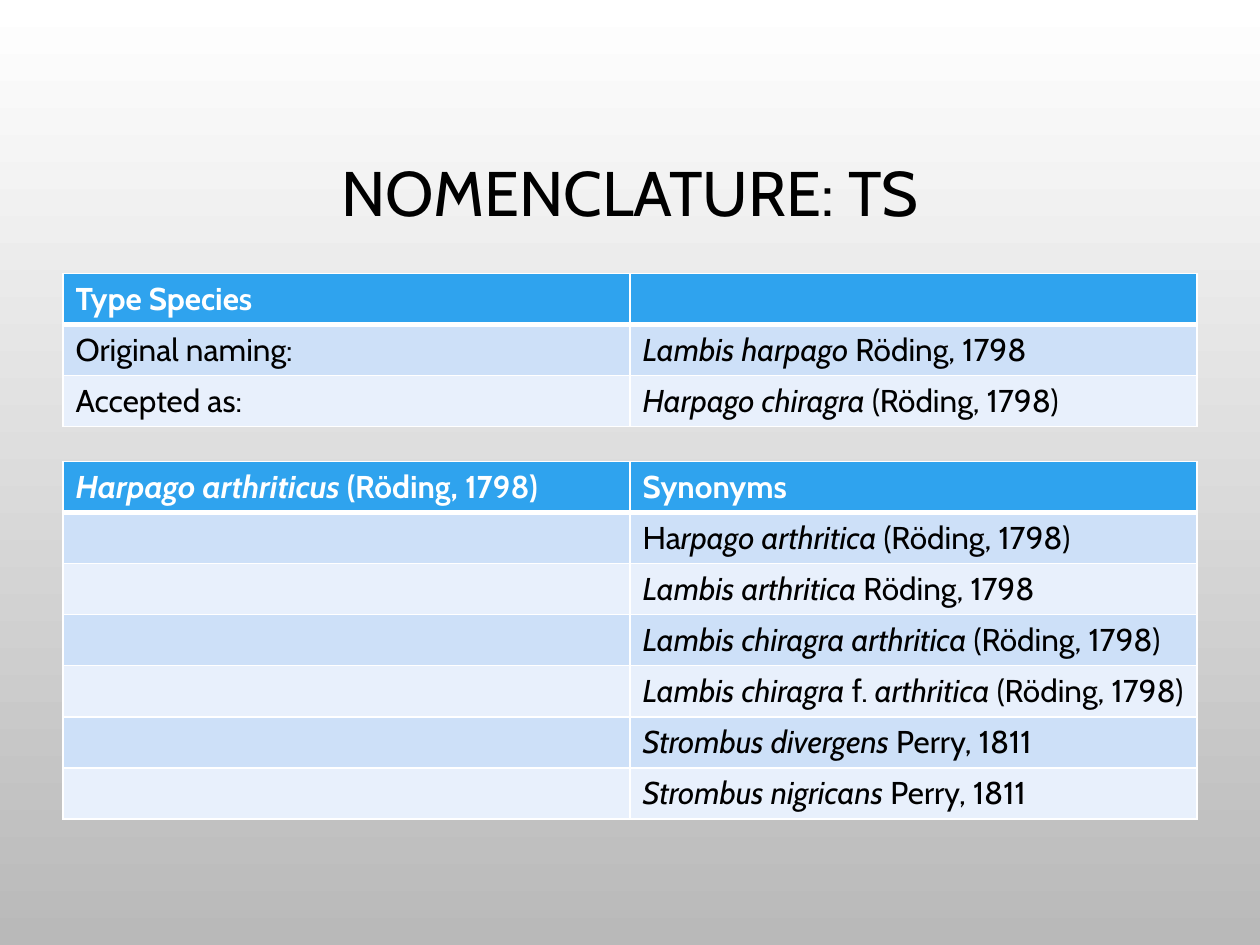
import pptx
import pptx.dml.color
import pptx.enum.text
import pptx.oxml
import pptx.oxml.ns
import pptx.util
from pptx.util import Cm


def color(hex_string):
    return pptx.dml.color.RGBColor.from_string(hex_string)


class SlideBuilder:
    font = "Cabin"
    black = "000000"
    white = "FFFFFF"
    header_fill = "2FA3EE"
    band_fills = ("CDE0F8", "E8F0FC")
    row_height = Cm(1.03)

    def __init__(self, slide):
        self.slide = slide

    def background(self, top, bottom):
        fill = self.slide.background.fill
        fill.gradient()
        fill.gradient_angle = 270
        for stop, shade in zip(fill.gradient_stops, (top, bottom)):
            stop.color.rgb = color(shade)

    def add_runs(self, paragraph, runs, size, text_color, bold=False):
        """Add (text, italic) pairs as runs."""
        for text, italic in runs:
            run = paragraph.add_run()
            run.text = text
            run.font.name = self.font
            run.font.size = pptx.util.Pt(size)
            run.font.color.rgb = color(text_color)
            run.font.bold = bold
            run.font.italic = italic

    def title(self, text, left, top, width, height):
        shape = self.slide.shapes.add_textbox(left, top, width, height)
        frame = shape.text_frame
        frame.word_wrap = True
        frame.vertical_anchor = pptx.enum.text.MSO_ANCHOR.MIDDLE
        paragraph = frame.paragraphs[0]
        paragraph.alignment = pptx.enum.text.PP_ALIGN.CENTER
        paragraph.line_spacing = 0.9
        self.add_runs(paragraph, [(text, False)], 36, self.black)

    def cell_borders(self, cell, row_index):
        properties = cell._tc.get_or_add_tcPr()
        widths = {"lnL": 1, "lnR": 1,
                  "lnT": 3 if row_index == 1 else 1,
                  "lnB": 3 if row_index == 0 else 1}
        for side, points in widths.items():
            properties.append(pptx.oxml.parse_xml(
                f'<a:{side} {pptx.oxml.ns.nsdecls("a")} w="{pptx.util.Pt(points)}">'
                f'<a:solidFill><a:srgbClr val="{self.white}"/></a:solidFill></a:{side}>'))

    def table(self, rows, left, top, column_width):
        columns = len(rows[0])
        table = self.slide.shapes.add_table(
            len(rows), columns, left, top,
            column_width * columns, self.row_height * len(rows)).table
        for column in table.columns:
            column.width = column_width
        for row_index, row in enumerate(rows):
            header = row_index == 0
            for column_index, runs in enumerate(row):
                cell = table.cell(row_index, column_index)
                self.cell_borders(cell, row_index)
                cell.fill.solid()
                cell.fill.fore_color.rgb = color(
                    self.header_fill if header else self.band_fills[(row_index - 1) % 2])
                self.add_runs(cell.text_frame.paragraphs[0], runs, 18,
                              self.white if header else self.black, header)


def plain(text):
    return [(text, False)]


def species(name, author):
    return [(name + " ", True), (author, False)]


def main():
    presentation = pptx.Presentation()
    presentation.slide_width = Cm(25.4)
    presentation.slide_height = Cm(19.05)
    builder = SlideBuilder(presentation.slides.add_slide(presentation.slide_layouts[6]))

    # Background and title
    builder.background("FFFFFF", "B9B9B9")
    builder.title("NOMENCLATURE: TS", Cm(1.9), Cm(1.73), Cm(21.6), Cm(4.45))

    # Type species
    roding = "Röding, 1798"
    moved = f"({roding})"
    perry = "Perry, 1811"
    left, column_width = Cm(1.27), Cm(11.43)
    builder.table([
        [plain("Type Species"), []],
        [plain("Original naming:"), species("Lambis harpago", roding)],
        [plain("Accepted as:"), species("Harpago chiragra", moved)],
    ], left, Cm(5.51), column_width)

    # Synonyms
    synonyms = [
        plain("Ha") + species("rpago arthritica", moved),
        species("Lambis arthritica", roding),
        species("Lambis chiragra arthritica", moved),
        [("Lambis chiragra ", True), ("f. ", False),
         ("arthritica", True), (" " + moved, False)],
        species("Strombus divergens", perry),
        species("Strombus nigricans", perry),
    ]
    header = [species("Harpago arthriticus", moved), plain("Synonyms")]
    builder.table([header] + [[[], synonym] for synonym in synonyms],
                  left, Cm(9.3), column_width)

    presentation.save("out.pptx")


if __name__ == "__main__":
    main()
